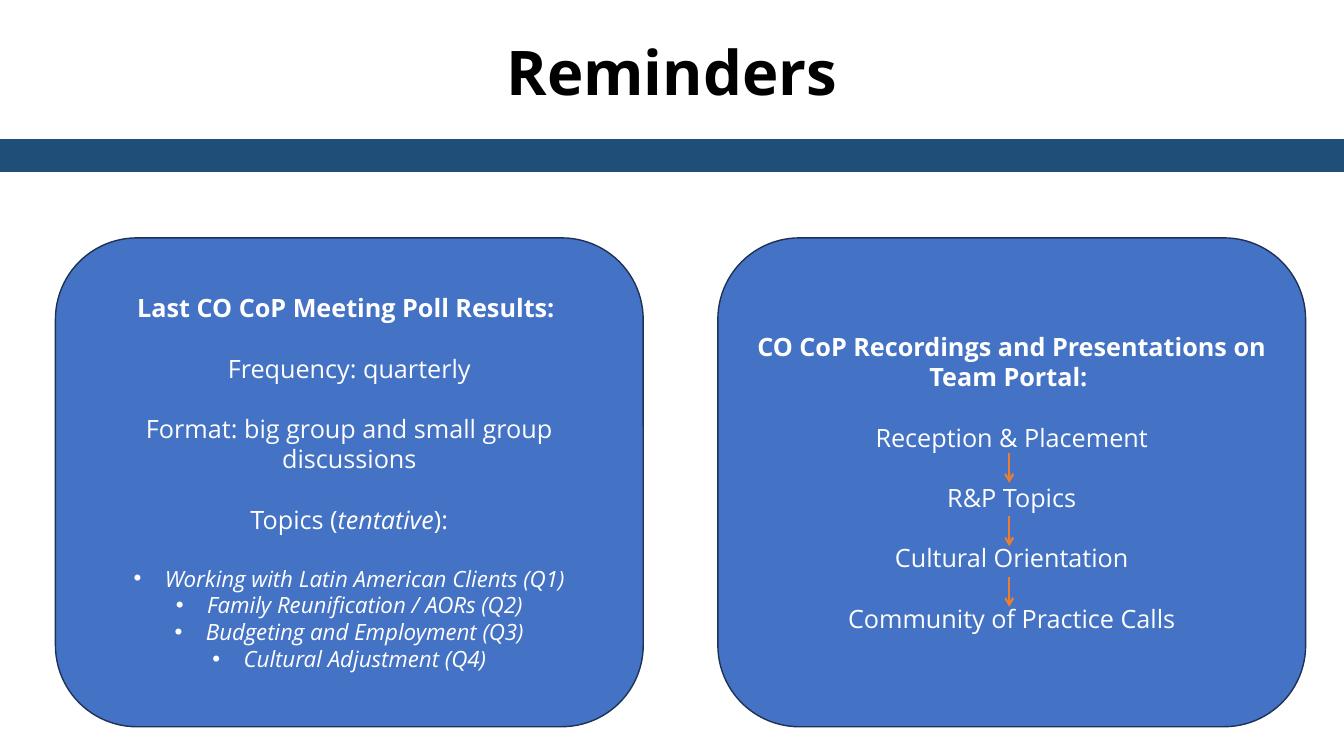
from lxml.etree import SubElement as Sub
from pptx import Presentation
from pptx.dml.color import RGBColor
from pptx.enum.shapes import MSO_CONNECTOR as Link, MSO_SHAPE as Shape
from pptx.enum.text import MSO_ANCHOR as Anchor, MSO_AUTO_SIZE as Fit, PP_ALIGN as Align
from pptx.oxml.ns import qn
from pptx.util import Inches, Pt

FACE = "Open Sans"
WHITE, BLACK = "FFFFFF", "000000"
BLUE, EDGE, NAVY, ORANGE = "4472C4", "1E3256", "1F4E79", "ED7D31"
GAP = 21.6

POLL = [
    [("Last CO CoP Meeting Poll Results: ", "b")],
    [("Frequency: quarterly", "")],
    [("Format: big group and small group discussions", "")],
    [("Topics (", ""), ("tentative", "i"), ("):", "")],
]
TOPICS = [
    "Working with Latin American Clients (Q1)",
    "Family Reunification / AORs (Q2)",
    "Budgeting and Employment (Q3)",
    "Cultural Adjustment (Q4)",
]
STEPS = [
    [("CO CoP Recordings and Presentations on Team Portal: ", "b")],
    [("Reception & Placement", "")],
    [("R&P Topics", "")],
    [("Cultural Orientation", "")],
    [("Community of Practice Calls", "")],
]


def tint(part, color):
    """Give a fill or line a solid colour."""
    part.solid()
    part.fore_color.rgb = RGBColor.from_string(color)


def style(run, size, color, mode=""):
    """Format a run; mode holds b for bold and i for italic."""
    font = run.font
    font.name, font.size = FACE, Pt(size)
    font.bold, font.italic = "b" in mode, "i" in mode
    tint(font.fill, color)


def add_box(slide, kind, spot, fill, edge):
    """Add a filled and outlined preset shape."""
    box = slide.shapes.add_shape(kind, *map(Inches, spot))
    box.shadow.inherit = False
    tint(box.fill, fill)
    tint(box.line.fill, edge)
    box.line.width = Pt(1)
    return box


def write(para, parts, size, after):
    """Fill a centred paragraph with styled runs."""
    para.alignment = Align.CENTER
    para.space_after = Pt(after)
    for text, mode in parts:
        run = para.add_run()
        run.text = text
        style(run, size, WHITE, mode)


def dot(para):
    """Turn a paragraph into a bullet with a hanging indent."""
    props = para._p.get_or_add_pPr()
    props.set("marL", str(Inches(0.31)))
    props.set("indent", str(-Inches(0.31)))
    Sub(props, qn("a:buFont"), typeface="Arial")
    Sub(props, qn("a:buChar"), char="•")


def add_card(slide, left, lines, items=()):
    """Add a rounded card with spaced lines and optional bullets."""
    card = add_box(slide, Shape.ROUNDED_RECTANGLE, (left, 2.36, 5.83, 4.85), BLUE, EDGE)
    frame = card.text_frame
    frame.word_wrap = True
    frame.vertical_anchor = Anchor.MIDDLE
    for i, parts in enumerate(lines):
        para = frame.add_paragraph() if i else frame.paragraphs[0]
        last = i == len(lines) - 1 and not items
        write(para, parts, 18, 0 if last else GAP)
    for item in items:
        para = frame.add_paragraph()
        write(para, [(item, "i")], 16, 0)
        dot(para)


def add_arrow(slide, x, top):
    """Add a short arrow that points down."""
    ends = map(Inches, (x, top, x, top + 0.3))
    arrow = slide.shapes.add_connector(Link.STRAIGHT, *ends)
    tint(arrow.line.fill, ORANGE)
    arrow.line.width = Pt(1.5)
    Sub(arrow.line._get_or_add_ln(), qn("a:tailEnd"), type="arrow")
    Sub(arrow._element.spPr, qn("a:effectLst"))


def set_title(slide, text):
    """Place and format the slide title."""
    title = slide.shapes.title
    title.left, title.top = Inches(0.55), Inches(0.29)
    title.width, title.height = Inches(12.23), Inches(0.84)
    frame = title.text_frame
    frame.text = text
    frame.auto_size = Fit.NONE
    frame.vertical_anchor = Anchor.TOP
    para = frame.paragraphs[0]
    para.alignment = Align.CENTER
    style(para.runs[0], 44, BLACK, "b")


def main():
    """Build the slide and save it."""
    deck = Presentation()
    deck.slide_width, deck.slide_height = Inches(13.33), Inches(7.5)
    slide = deck.slides.add_slide(deck.slide_layouts[5])
    set_title(slide, "Reminders")
    add_box(slide, Shape.RECTANGLE, (0, 1.39, 13.33, 0.31), NAVY, NAVY)
    add_card(slide, 0.55, POLL, TOPICS)
    add_card(slide, 7.12, STEPS)
    for top in (4.49, 5.12, 5.72):
        add_arrow(slide, 10.01, top)
    deck.save("out.pptx")


if __name__ == "__main__":
    main()
